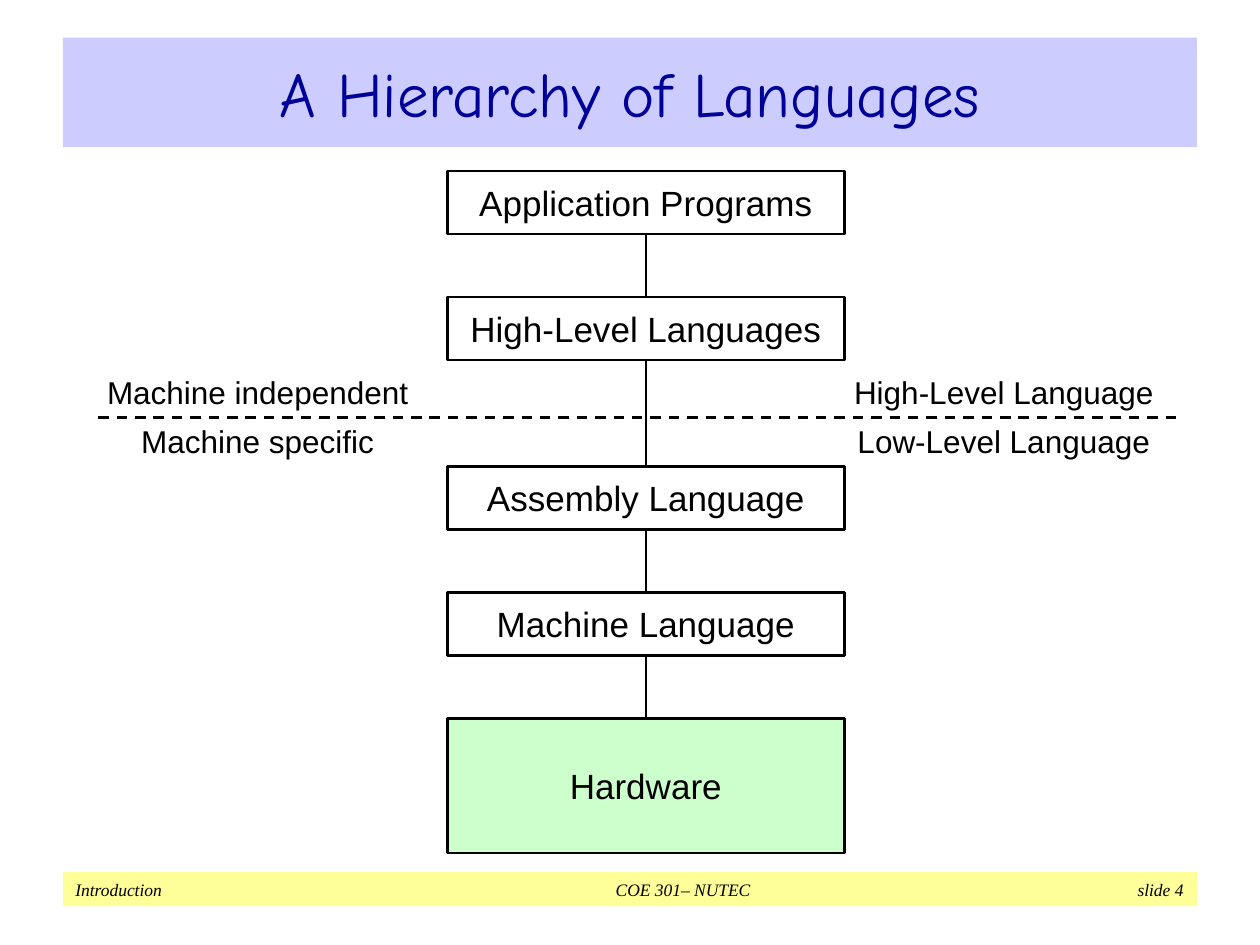
from lxml.etree import SubElement
from pptx import Presentation
from pptx.dml.color import RGBColor
from pptx.enum.dml import MSO_LINE
from pptx.enum.shapes import MSO_CONNECTOR, MSO_SHAPE
from pptx.enum.text import MSO_ANCHOR, PP_ALIGN
from pptx.oxml.ns import qn
from pptx.util import Cm, Pt

BLACK = RGBColor(0x00, 0x00, 0x00)
WHITE = RGBColor(0xFF, 0xFF, 0xFF)
NAVY = RGBColor(0x00, 0x00, 0x99)
LAVENDER = RGBColor(0xCC, 0xCC, 0xFF)
GREEN = RGBColor(0xCC, 0xFF, 0xCC)
YELLOW = RGBColor(0xFF, 0xFF, 0x99)


def write(sp, text, size=20, font="Arial", color=BLACK, italic=False,
          align=PP_ALIGN.CENTER, margin=0.0):
    tf = sp.text_frame
    tf.word_wrap = True
    tf.vertical_anchor = MSO_ANCHOR.MIDDLE
    tf.margin_left = tf.margin_right = Cm(margin)
    tf.margin_top = tf.margin_bottom = 0
    p = tf.paragraphs[0]
    p.alignment = align
    r = p.add_run()
    r.text = text
    r.font.name = font
    r.font.size = Pt(size)
    r.font.italic = italic
    r.font.color.rgb = color
    return p


def add_box(s, x, y, w, h, fill, outlined=False):
    sp = s.shapes.add_shape(MSO_SHAPE.RECTANGLE, Cm(x), Cm(y), Cm(w), Cm(h))
    sp.shadow.inherit = False
    sp.fill.solid()
    sp.fill.fore_color.rgb = fill
    if outlined:
        sp.line.color.rgb = BLACK
        sp.line.width = Pt(1.5)
    else:
        sp.line.fill.background()
    return sp


def add_line(s, x1, y1, x2, y2, dash=None):
    line = s.shapes.add_connector(MSO_CONNECTOR.STRAIGHT, Cm(x1), Cm(y1), Cm(x2), Cm(y2))
    line.line.color.rgb = BLACK
    line.line.width = Pt(1.5)
    if dash:
        line.line.dash_style = dash
    SubElement(line._element.spPr, qn("a:effectLst"))


def add_title(s, x, y, w, h):
    sp = add_box(s, x, y, w, h, LAVENDER)
    write(sp, "A Hierarchy of Languages", size=36, font="Comic Neue", color=NAVY)


def add_footer(s, x, y, w, h):
    sp = add_box(s, x, y, w, h, YELLOW)
    p = write(sp, "Introduction\tCOE 301– NUTEC\tslide 4", size=10,
              font="Times New Roman", italic=True, align=PP_ALIGN.LEFT, margin=0.25)
    tabs = SubElement(p._p.get_or_add_pPr(), qn("a:tabLst"))
    for pos, algn in ((12.25, "ctr"), (w - 0.52, "r")):
        SubElement(tabs, qn("a:tab"), pos=str(Cm(pos)), algn=algn)


def add_hierarchy(s, x, y, w, h):
    box_h, pitch, hardware_h = 1.27, 2.54, 2.72
    hardware_top = h - hardware_h
    assembly_top = hardware_top - 2 * pitch
    add_line(s, x + w / 2, y + box_h / 2, x + w / 2, y + hardware_top)
    levels = [
        ("Application Programs", 0, box_h, WHITE),
        ("High-Level Languages", pitch, box_h, WHITE),
        ("Assembly Language", assembly_top, box_h, WHITE),
        ("Machine Language", assembly_top + pitch, box_h, WHITE),
        ("Hardware", hardware_top, hardware_h, GREEN),
    ]
    for name, top, height, fill in levels:
        write(add_box(s, x, y + top, w, height, fill, outlined=True), name)


def add_divider(s, x, y, w, h):
    label_w, label_h = 6.73, 0.64
    add_line(s, x + 0.15, y + 0.82, x + w, y + 0.82, dash=MSO_LINE.DASH)
    columns = [
        (0, ("Machine independent", "Machine specific")),
        (15.04, ("High-Level Language", "Low-Level Language")),
    ]
    for left, labels in columns:
        for label, top in zip(labels, (0, h - label_h)):
            sp = s.shapes.add_textbox(Cm(x + left), Cm(y + top), Cm(label_w), Cm(label_h))
            write(sp, label, size=18)


def main():
    prs = Presentation()
    prs.slide_width, prs.slide_height = Cm(25.4), Cm(19.05)
    s = prs.slides.add_slide(prs.slide_layouts[6])
    add_footer(s, 1.27, 17.58, 22.86, 0.69)
    add_title(s, 1.27, 0.76, 22.86, 2.21)
    add_hierarchy(s, 9.02, 3.45, 8.0, 13.75)
    add_divider(s, 1.83, 7.59, 21.92, 1.61)
    prs.save("out.pptx")


if __name__ == "__main__":
    main()
